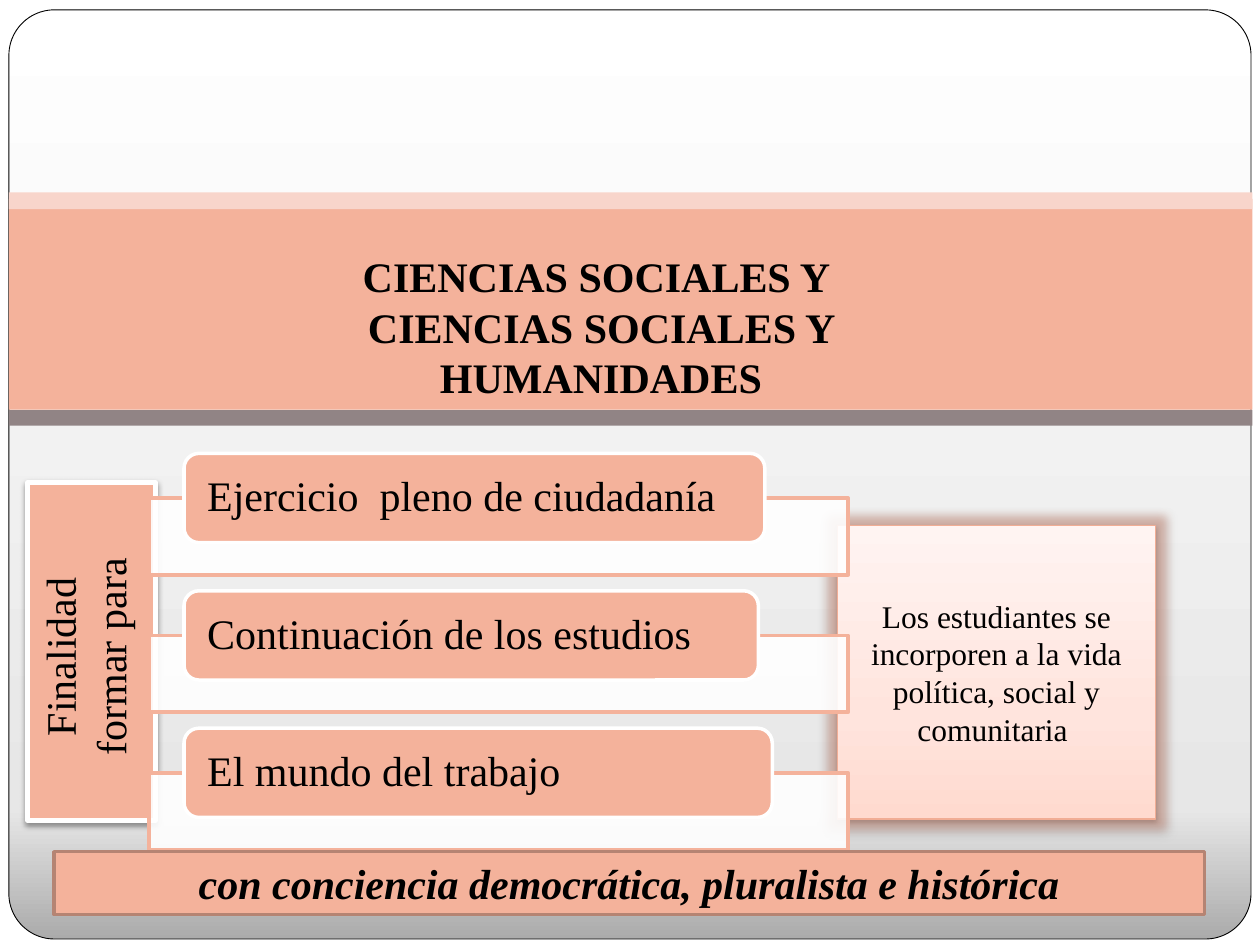
import pptx
import pptx.util
import pptx.dml.color
import pptx.enum.shapes
import pptx.enum.text
import pptx.oxml
import pptx.oxml.ns

Cm = pptx.util.Cm
Pt = pptx.util.Pt
RGBColor = pptx.dml.color.RGBColor
SHAPE = pptx.enum.shapes.MSO_SHAPE
ANCHOR = pptx.enum.text.MSO_ANCHOR
ALIGN = pptx.enum.text.PP_ALIGN
AUTO_SIZE = pptx.enum.text.MSO_AUTO_SIZE
qn = pptx.oxml.ns.qn

FONT = "Times New Roman"
BLACK = RGBColor(0x00, 0x00, 0x00)
WHITE = RGBColor(0xFF, 0xFF, 0xFF)
SALMON = RGBColor(0xF4, 0xB2, 0x9B)
PALE_SALMON = RGBColor(0xF8, 0xD5, 0xCB)
ROSE_LINE = RGBColor(0xF1, 0xAD, 0x95)
BROWN_LINE = RGBColor(0xB5, 0x84, 0x73)
GLOW = RGBColor(0xD0, 0x80, 0x68)
TAUPE = RGBColor(0x91, 0x84, 0x85)

GREY_STOPS = [(0, RGBColor(0xAB, 0xAB, 0xAB)), (14, RGBColor(0xE7, 0xE7, 0xE7)), (100, WHITE)]
ROSE_STOPS = [
    (0, RGBColor(0xFF, 0xDA, 0xCF)),
    (35, RGBColor(0xFF, 0xE4, 0xDD)),
    (100, RGBColor(0xFF, 0xF4, 0xF2)),
]


def make_xml(tag, content):
    return pptx.oxml.parse_xml(f'<a:{tag} {pptx.oxml.ns.nsdecls("a")}>{content}</a:{tag}>')


def set_gradient(fill, element, stops):
    """Fill from bottom to top with the given (percent, colour) stops."""
    fill.gradient()
    fill.gradient_angle = 90
    content = "".join(
        f'<a:gs pos="{percent * 1000}"><a:srgbClr val="{color}"/></a:gs>' for percent, color in stops
    )
    old_stops = next(element.iter(qn("a:gsLst")))
    old_stops.getparent().replace(old_stops, make_xml("gsLst", content))


def add_box(slide, kind, left, top, width, height, fill=None, line=None, line_width=2):
    shape = slide.shapes.add_shape(kind, Cm(left), Cm(top), Cm(width), Cm(height))
    shape.shadow.inherit = False
    if isinstance(fill, list):
        set_gradient(shape.fill, shape.element, fill)
    else:
        shape.fill.solid()
        shape.fill.fore_color.rgb = fill
    if line is None:
        shape.line.fill.background()
    else:
        shape.line.color.rgb = line
        shape.line.width = Pt(line_width)
    return shape


def set_opacity(shape, percent):
    color = shape.element.spPr.find(qn("a:solidFill"))[0]
    color.append(pptx.oxml.parse_xml(
        f'<a:alpha {pptx.oxml.ns.nsdecls("a")} val="{percent * 1000}"/>'))


def add_shadow(shape, glow=False):
    content = (
        f'<a:outerShdw blurRad="{Pt(3.1)}" dist="{Pt(1.6)}" dir="5400000" rotWithShape="0">'
        f'<a:srgbClr val="{BLACK}"><a:alpha val="38000"/></a:srgbClr></a:outerShdw>'
    )
    if glow:
        content = (
            f'<a:glow rad="{Pt(11)}"><a:srgbClr val="{GLOW}">'
            f'<a:alpha val="40000"/></a:srgbClr></a:glow>' + content
        )
    effects = shape.element.spPr.find(qn("a:effectLst"))
    effects.getparent().replace(effects, make_xml("effectLst", content))


def write_text(shape, lines, size=24, align=ALIGN.CENTER, anchor=ANCHOR.TOP,
               bold=False, italic=False, grow=False):
    frame = shape.text_frame
    frame.word_wrap = True
    frame.vertical_anchor = anchor
    if grow:
        frame.auto_size = AUTO_SIZE.SHAPE_TO_FIT_TEXT
    frame.text = "\n".join(lines)
    for paragraph in frame.paragraphs:
        paragraph.alignment = align
        font = paragraph.font
        font.name, font.size, font.bold, font.italic = FONT, Pt(size), bold, italic
        font.color.rgb = BLACK
    return frame


def add_frame(slide):
    set_gradient(slide.background.fill, slide.element, GREY_STOPS)
    add_box(slide, SHAPE.RECTANGLE, 0, 0, 25.4, 19.05, WHITE)
    panel = add_box(slide, SHAPE.ROUNDED_RECTANGLE, 0.18, 0.2, 25.04, 18.73, GREY_STOPS, BLACK, 0.5)
    panel.adjustments[0] = 0.049
    for top, height, color in [(4.01, 4.25, SALMON), (3.88, 0.34, PALE_SALMON), (8.27, 0.31, TAUPE)]:
        add_box(slide, SHAPE.RECTANGLE, 0.18, top, 25.07, height, color)


def add_purpose_row(slide, top, label_width, text):
    bar = add_box(slide, SHAPE.RECTANGLE, 3, top + 0.9, 14.1, 1.55, WHITE, SALMON)
    set_opacity(bar, 90)
    label = add_box(slide, SHAPE.ROUNDED_RECTANGLE, 3.71, top, label_width, 1.8, SALMON, WHITE)
    frame = write_text(label, [text], align=ALIGN.LEFT, anchor=ANCHOR.MIDDLE)
    frame.margin_left = frame.margin_right = Cm(0.38)
    frame.margin_top = frame.margin_bottom = 0
    frame.paragraphs[0].line_spacing = 0.9


def main():
    presentation = pptx.Presentation()
    presentation.slide_width, presentation.slide_height = Cm(25.4), Cm(19.05)
    slide = presentation.slides.add_slide(presentation.slide_layouts[6])
    add_frame(slide)

    # Title
    title = slide.shapes.add_textbox(Cm(4.42), Cm(4.93), Cm(15.39), Cm(2.31))
    write_text(title, ["CIENCIAS SOCIALES Y ", "CIENCIAS SOCIALES Y HUMANIDADES"], bold=True, grow=True)

    # Vertical heading
    heading = add_box(slide, SHAPE.RECTANGLE, 0.56, 9.73, 2.57, 6.81, SALMON, WHITE, 3)
    add_shadow(heading)
    frame = write_text(heading, ["Finalidad ", "formar para "], grow=True)
    frame._txBody.bodyPr.set("vert", "vert270")

    # Outcome
    outcome = add_box(slide, SHAPE.FLOWCHART_PROCESS, 16.89, 10.59, 6.4, 5.92,
                      ROSE_STOPS, ROSE_LINE, 0.75)
    add_shadow(outcome, glow=True)
    write_text(outcome, ["Los estudiantes se incorporen a la vida política, social y comunitaria "],
               size=18, anchor=ANCHOR.MIDDLE)

    # Purposes
    purposes = [
        (11.71, "Ejercicio  pleno de ciudadanía"),
        (11.58, "Continuación de los estudios"),
        (11.86, "El mundo del trabajo"),
    ]
    for index, (label_width, text) in enumerate(purposes):
        add_purpose_row(slide, 9.14 + 2.77 * index, label_width, text)

    # Closing bar
    closing = add_box(slide, SHAPE.RECTANGLE, 1.09, 17.17, 23.19, 1.27, SALMON, BROWN_LINE)
    write_text(closing, ["con conciencia democrática, pluralista e histórica"],
               bold=True, italic=True, grow=True)

    presentation.save("out.pptx")


if __name__ == "__main__":
    main()
